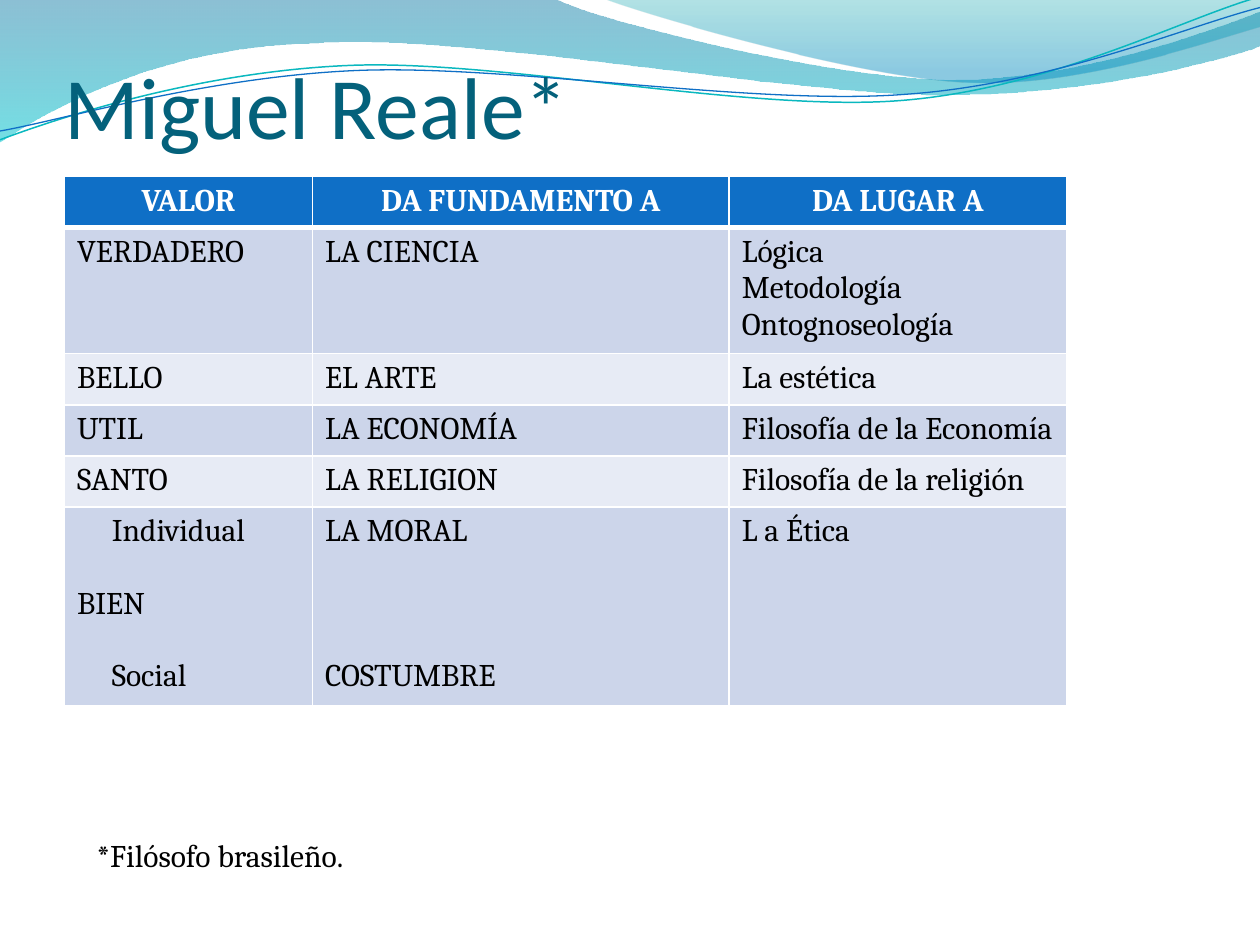
from lxml.etree import SubElement
from pptx import Presentation
from pptx.dml.color import RGBColor
from pptx.enum.text import MSO_ANCHOR, PP_ALIGN
from pptx.oxml import parse_xml
from pptx.oxml.ns import nsdecls, qn
from pptx.util import Cm, Pt

INCH = 2.54
LINE_GAP = 20.7
TABLE_BOX = (1.3, 3.56, 20.2, 11.48)
COLUMN_WIDTHS = [5, 8.4, 6.8]
ROW_HEIGHT = 1.03
BAND_FILLS = ["CCD5EA", "E7EBF5"]
HEADERS = ["VALOR", "DA FUNDAMENTO A", "DA LUGAR A"]
ROWS = [
    [["VERDADERO"], ["LA CIENCIA"], ["Lógica", "Metodología", "Ontognoseología"]],
    [["BELLO"], ["EL ARTE"], ["La estética"]],
    [["UTIL"], ["LA ECONOMÍA"], ["Filosofía de la Economía"]],
    [["SANTO"], ["LA RELIGION"], ["Filosofía de la religión"]],
    [["Individual", "BIEN", "Social"], ["LA MORAL", "COSTUMBRE"], ["L a Ética"]],
]
INDENTS = {"Individual": 0.7, "Social": 0.7}
SKIPPED_LINES = {"BIEN": 1, "Social": 1, "COSTUMBRE": 3}

LARGE_WAVE = [
    [(0, 0)], [(4.4, -0.01)],
    [(4.76, 0.17), (6.64, 0.63), (7.58, 0.63)],
    [(8.53, 0.63), (9.58, 0.26), (10, 0.09)], [(10.01, 0.36)],
    [(9.83, 0.44), (8.7, 0.76), (7.46, 0.75)],
    [(6.22, 0.75), (3.82, 0.28), (2.57, 0.34)],
    [(1.29, 0.36), (0.46, 0.83), (-0.01, 1.13)],
]
SMALL_WAVE = [
    [(4.79, -0.01)],
    [(5.09, 0.11), (6.82, 0.62), (7.69, 0.65)],
    [(8.56, 0.69), (9.61, 0.32), (10, 0.21)], [(10, 0)],
]
TEAL_CURVE = [
    [(0, 1.11)],
    [(0.48, 0.93), (1.58, 0.57), (2.77, 0.52)],
    [(3.95, 0.47), (5.93, 0.89), (7.13, 0.8)],
    [(8.33, 0.71), (9.38, 0.15), (9.98, -0.02)],
]
BLUE_CURVE = [
    [(0, 1.04)],
    [(0.47, 0.96), (1.64, 0.61), (2.83, 0.56)],
    [(4.03, 0.51), (5.97, 0.84), (7.17, 0.75)],
    [(8.36, 0.67), (9.41, 0.21), (10, 0.06)],
]


def rgb(value):
    """Turn a hex string into a colour."""
    return RGBColor.from_string(value)


def bend(shape, segments):
    """Turn each run of three line nodes that forms a curve into a cubic node."""
    lines = iter(list(shape.element.iter(qn("a:lnTo"))))
    for segment in segments[1:]:
        nodes = [next(lines) for _ in segment]
        if len(nodes) == 3:
            curve = parse_xml(f'<a:cubicBezTo {nsdecls("a")}/>')
            nodes[0].addprevious(curve)
            for node in nodes:
                curve.append(node[0])
                node.getparent().remove(node)


def add_outline(slide, segments, close):
    """Add a freeform without shadow along straight and cubic segments in inches."""
    points = [(Cm(x * INCH), Cm(y * INCH)) for segment in segments for x, y in segment]
    builder = slide.shapes.build_freeform(*points[0])
    builder.add_line_segments(points[1:], close=close)
    shape = builder.convert_to_shape()
    shape.shadow.inherit = False
    bend(shape, segments)
    return shape


def add_wave(slide, segments, stops):
    """Add a closed wave with a translucent vertical gradient."""
    shape = add_outline(slide, segments, True)
    shape.line.fill.background()
    shape.fill.gradient()
    shape.fill.gradient_angle = 270
    for stop, (position, color, _) in zip(shape.fill.gradient_stops, stops):
        stop.position = position
        stop.color.rgb = rgb(color)
    for node, (_, _, opacity) in zip(shape.element.spPr.iter(qn("a:srgbClr")), stops):
        SubElement(node, qn("a:alpha"), val=str(opacity * 1000))


def add_curve(slide, segments, color, width):
    """Add an open curved line."""
    shape = add_outline(slide, segments, False)
    shape.fill.background()
    shape.line.color.rgb = rgb(color)
    shape.line.width = Pt(width)


def write(paragraph, text, color, **values):
    """Write one run with the given font values."""
    run = paragraph.add_run()
    run.text = text
    run.font.color.rgb = rgb(color)
    for name, value in ({"name": "Cambria", "size": Pt(18), "bold": False} | values).items():
        setattr(run.font, name, value)


def add_text(slide, box, text, color, frame_values, **font_values):
    """Add a wrapping text box, placed in centimetres."""
    frame = slide.shapes.add_textbox(*map(Cm, box)).text_frame
    for name, value in ({"word_wrap": True} | frame_values).items():
        setattr(frame, name, value)
    write(frame.paragraphs[0], text, color, **font_values)


def format_cell(cell, fill, bottom_width):
    """Fill a cell and give it white borders."""
    cell.fill.solid()
    cell.fill.fore_color.rgb = rgb(fill)
    properties = cell._tc.get_or_add_tcPr()
    for index, (side, width) in enumerate({"L": 1, "R": 1, "T": 1, "B": bottom_width}.items()):
        properties.insert(index, parse_xml(
            f'<a:ln{side} {nsdecls("a")} w="{Pt(width)}"><a:solidFill>'
            f'<a:srgbClr val="FFFFFF"/></a:solidFill></a:ln{side}>'))


def fill_cell(cell, texts, color, alignment, bold):
    """Write the paragraphs of a cell with their indents and gaps."""
    frame = cell.text_frame
    for index, text in enumerate(texts):
        paragraph = frame.add_paragraph() if index else frame.paragraphs[0]
        paragraph.alignment = alignment
        if text in SKIPPED_LINES:
            paragraph.space_before = Pt(SKIPPED_LINES[text] * LINE_GAP)
        if text in INDENTS:
            paragraph._p.get_or_add_pPr().set("marL", str(Cm(INDENTS[text])))
        write(paragraph, text, color, bold=bold)


def add_values_table(slide):
    """Add the table of values, whose rows grow with their text."""
    shape = slide.shapes.add_table(len(ROWS) + 1, len(HEADERS), *map(Cm, TABLE_BOX))
    table = shape.table
    for column, width in zip(table.columns, COLUMN_WIDTHS):
        column.width = Cm(width)
    for row in table.rows:
        row.height = Cm(ROW_HEIGHT)
    shape.height = Cm(TABLE_BOX[3])
    for cell, header in zip(table.rows[0].cells, HEADERS):
        format_cell(cell, "0F6FC6", 3)
        fill_cell(cell, [header], "FFFFFF", PP_ALIGN.CENTER, True)
    for index, entries in enumerate(ROWS):
        for cell, texts in zip(table.rows[index + 1].cells, entries):
            format_cell(cell, BAND_FILLS[index % 2], 1)
            fill_cell(cell, texts, "000000", PP_ALIGN.LEFT, False)


def main():
    """Build and save the slide."""
    presentation = Presentation()
    presentation.slide_width, presentation.slide_height = Cm(25.4), Cm(19.05)
    slide = presentation.slides.add_slide(presentation.slide_layouts[6])
    add_wave(slide, LARGE_WAVE, [(0, "0074A1", 45), (1, "00C6CF", 55)])
    add_wave(slide, SMALL_WAVE, [(0, "00A1A9", 30), (0.8, "008BBF", 45)])
    add_curve(slide, TEAL_CURVE, "0AB8BF", 0.85)
    add_curve(slide, BLUE_CURVE, "0F6FC6", 0.75)
    title_frame = {"vertical_anchor": MSO_ANCHOR.BOTTOM, "margin_left": 0,
                   "margin_right": 0, "margin_bottom": 0}
    add_text(slide, (1.3, 0, 22.86, 3.17), "Miguel Reale*", "04617B", title_frame,
             name="Calibri", size=Pt(50))
    add_values_table(slide)
    add_text(slide, (1.7, 16.72, 23.9, 1.02), "*Filósofo brasileño.", "000000", {})
    presentation.save("out.pptx")


if __name__ == "__main__":
    main()
